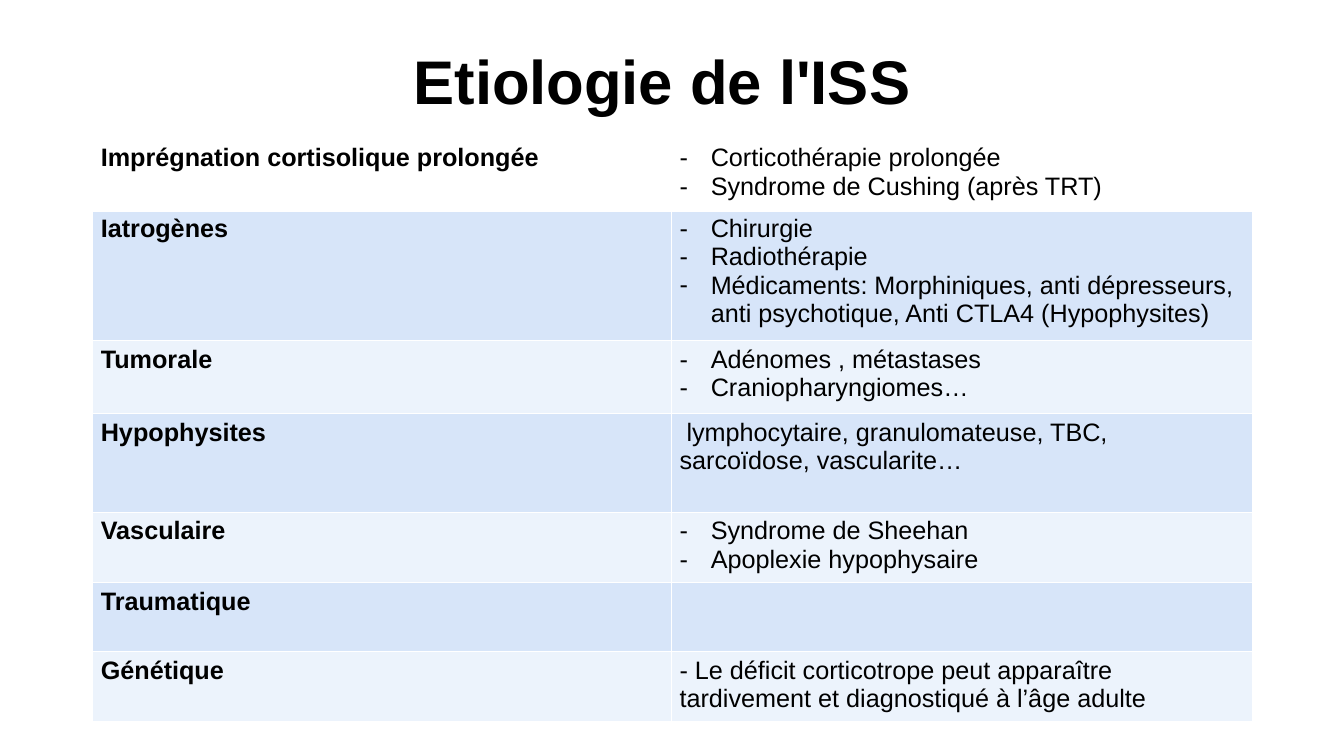
import pptx
import pptx.util
import pptx.dml.color
import pptx.enum.text
import pptx.oxml
import pptx.oxml.ns
import lxml.etree

Inches = pptx.util.Inches
ALIGN = pptx.enum.text.PP_ALIGN
ANCHOR = pptx.enum.text.MSO_ANCHOR
SLIDE_WIDTH, SLIDE_HEIGHT = 13.33, 7.5


def rgb(value):
    return pptx.dml.color.RGBColor.from_string(value)


def write(paragraph, text, size=18, bold=False, color="000000", align=ALIGN.LEFT, bullet=None):
    paragraph.alignment = align
    run = paragraph.add_run()
    run.text = text
    run.font.name = "Arial"
    run.font.size = pptx.util.Pt(size)
    run.font.bold = bold
    run.font.color.rgb = rgb(color)
    if bullet:
        properties = paragraph._p.get_or_add_pPr()
        properties.set("marL", str(Inches(0.31)))
        properties.set("indent", str(-Inches(0.31)))
        qn = pptx.oxml.ns.qn
        lxml.etree.SubElement(properties, qn("a:buFont")).set("typeface", "Arial")
        lxml.etree.SubElement(properties, qn("a:buChar")).set("char", bullet)


presentation = pptx.Presentation()
presentation.slide_width = Inches(SLIDE_WIDTH)
presentation.slide_height = Inches(SLIDE_HEIGHT)
slide = presentation.slides.add_slide(presentation.slide_layouts[6])

heading = slide.shapes.add_textbox(Inches(0.82), Inches(0.07), Inches(11.5), Inches(1.45)).text_frame
heading.word_wrap = True
heading.vertical_anchor = ANCHOR.MIDDLE
write(heading.paragraphs[0], "Etiologie de l'ISS", size=44, bold=True, align=ALIGN.CENTER)

etiologies = [
    (0.68, "Imprégnation cortisolique prolongée", "-",
     ["Corticothérapie prolongée", "Syndrome de Cushing (après TRT)"]),
    (1.22, "Iatrogènes", "-",
     ["Chirurgie", "Radiothérapie",
      "Médicaments: Morphiniques, anti dépresseurs, anti psychotique, Anti CTLA4 (Hypophysites)"]),
    (0.72, "Tumorale", "-", ["Adénomes , métastases", "Craniopharyngiomes…"]),
    (0.98, "Hypophysites", None,
     [" lymphocytaire, granulomateuse, TBC, sarcoïdose, vascularite…"]),
    (0.68, "Vasculaire", "-", ["Syndrome de Sheehan", "Apoplexie hypophysaire"]),
    (0.68, "Traumatique", None, []),
    (0.68, "Génétique", None,
     ["- Le déficit corticotrope peut apparaître tardivement et diagnostiqué à l’âge adulte"]),
]
cause_width, examples_width = 5.74, 5.76
table_height = sum(etiology[0] for etiology in etiologies)

table = slide.shapes.add_table(
    len(etiologies), 2, Inches(0.92), Inches(1.38),
    Inches(cause_width + examples_width), Inches(table_height)).table
table.columns[0].width = Inches(cause_width)
table.columns[1].width = Inches(examples_width)

for row, (height, cause, bullet, examples) in enumerate(etiologies):
    table.rows[row].height = Inches(height)
    band = "FFFFFF" if row == 0 else ("ECF3FC", "D7E5F9")[row % 2]
    for column, lines in enumerate(([cause], examples)):
        cell = table.cell(row, column)
        cell.margin_left = cell.margin_right = Inches(0.08)
        cell.margin_top = cell.margin_bottom = Inches(0.05)
        cell.fill.solid()
        cell.fill.fore_color.rgb = rgb(band)
        for index, side in enumerate("LRTB"):
            heavy = (row, side) in [(0, "B"), (1, "T")]
            border = pptx.oxml.parse_xml(
                f'<a:ln{side} {pptx.oxml.ns.nsdecls("a")} w="{pptx.util.Pt(3 if heavy else 1)}">'
                '<a:solidFill><a:srgbClr val="FFFFFF"/></a:solidFill>'
                f'</a:ln{side}>')
            cell._tc.get_or_add_tcPr().insert(index, border)
        for index, line in enumerate(lines):
            text_frame = cell.text_frame
            paragraph = text_frame.add_paragraph() if index else text_frame.paragraphs[0]
            write(paragraph, line, bold=column == 0, bullet=bullet if column else None)

presentation.save("out.pptx")
